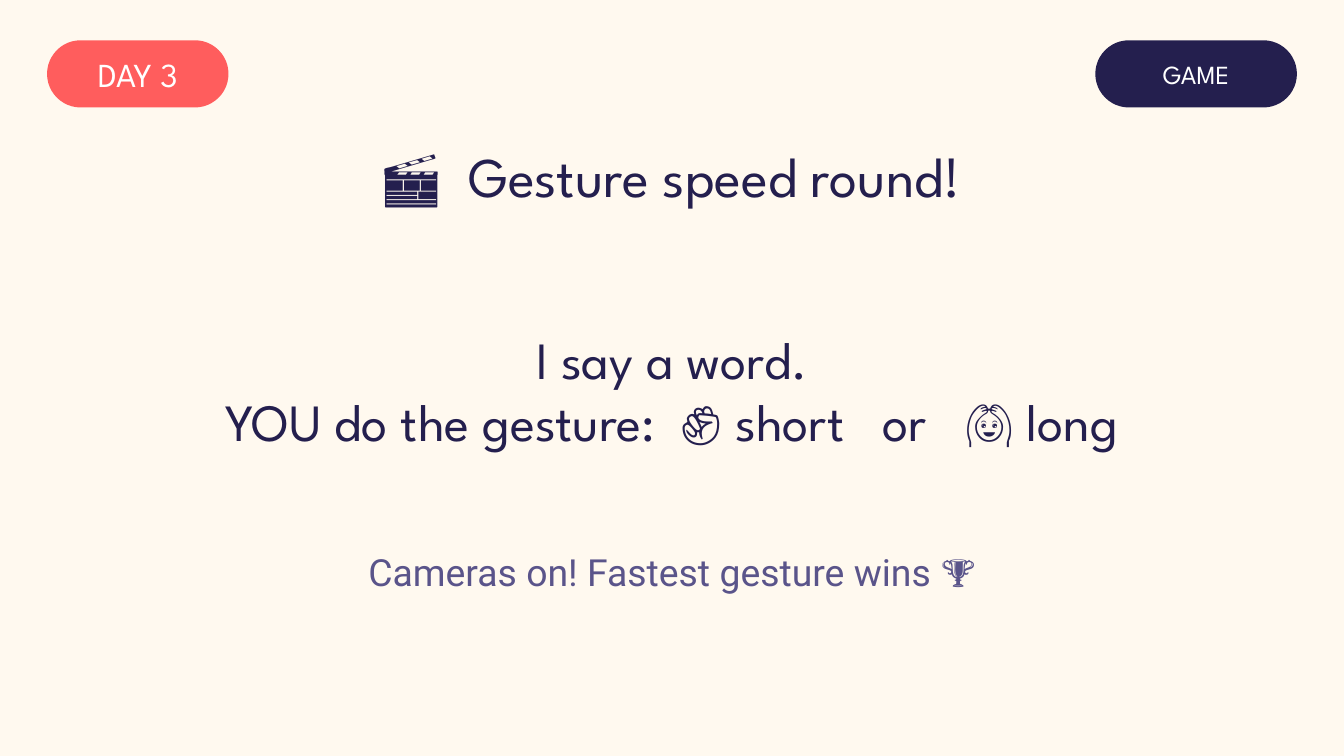
"""Build the gesture speed round game slide."""
from dataclasses import dataclass

from pptx import Presentation
from pptx.dml.color import RGBColor
from pptx.enum.shapes import MSO_SHAPE
from pptx.enum.text import MSO_ANCHOR, MSO_AUTO_SIZE, PP_ALIGN
from pptx.util import Pt

PILL = MSO_SHAPE.ROUNDED_RECTANGLE
MIDDLE = MSO_ANCHOR.MIDDLE
NO_FIT = MSO_AUTO_SIZE.NONE
CENTER = PP_ALIGN.CENTER


@dataclass(frozen=True)
class Theme:
    cream: RGBColor = RGBColor.from_string("FFF9EF")
    coral: RGBColor = RGBColor.from_string("FF5D5D")
    navy: RGBColor = RGBColor.from_string("241F4E")
    violet: RGBColor = RGBColor.from_string("5A548A")
    white: RGBColor = RGBColor.from_string("FFFFFF")
    display: str = "League Spartan"
    text: str = "Roboto"
    title_size: int = 30
    rule_size: int = 28
    hint_size: int = 20
    day_size: int = 18
    game_size: int = 14


def write(frame, lines, font, size, color):
    frame.auto_size = NO_FIT
    frame.vertical_anchor = MIDDLE
    for index, line in enumerate(lines):
        paragraph = frame.add_paragraph() if index else frame.paragraphs[0]
        paragraph.alignment = CENTER
        run = paragraph.add_run()
        run.text = line
        run.font.name = font
        run.font.size = Pt(size)
        run.font.color.rgb = color


theme = Theme()
deck = Presentation()
deck.slide_width, deck.slide_height = Pt(720), Pt(405)
slide = deck.slides.add_slide(deck.slide_layouts[5])
slide.background.fill.solid()
slide.background.fill.fore_color.rgb = theme.cream

for label, left, width, fill, size in (
    ("DAY 3", 25.2, 97.2, theme.coral, theme.day_size),
    ("GAME", 586.8, 108, theme.navy, theme.game_size),
):
    badge = slide.shapes.add_shape(PILL, Pt(left), Pt(21.6), Pt(width), Pt(36))
    badge.adjustments[0] = 0.5
    badge.shadow.inherit = False
    badge.fill.solid()
    badge.fill.fore_color.rgb = fill
    badge.line.fill.background()
    frame = badge.text_frame
    frame.margin_left = frame.margin_right = Pt(0)
    frame.margin_top = frame.margin_bottom = Pt(0)
    write(frame, [label], theme.display, size, theme.white)

title = slide.shapes.title
title.left, title.top, title.width, title.height = Pt(0), Pt(68.4), Pt(720), Pt(50.4)
write(title.text_frame, ["🎬  Gesture speed round!"], theme.display, theme.title_size, theme.navy)

rules = ["I say a word.", "YOU do the gesture:  ✊ short   or   🙆 long"]
hint = ["Cameras on! Fastest gesture wins 🏆"]
for lines, top, height, font, size, color in (
    (rules, 158.4, 100.8, theme.display, theme.rule_size, theme.navy),
    (hint, 288, 36, theme.text, theme.hint_size, theme.violet),
):
    message = slide.shapes.add_textbox(Pt(0), Pt(top), Pt(720), Pt(height))
    message.text_frame.word_wrap = True
    write(message.text_frame, lines, font, size, color)

deck.save("out.pptx")
